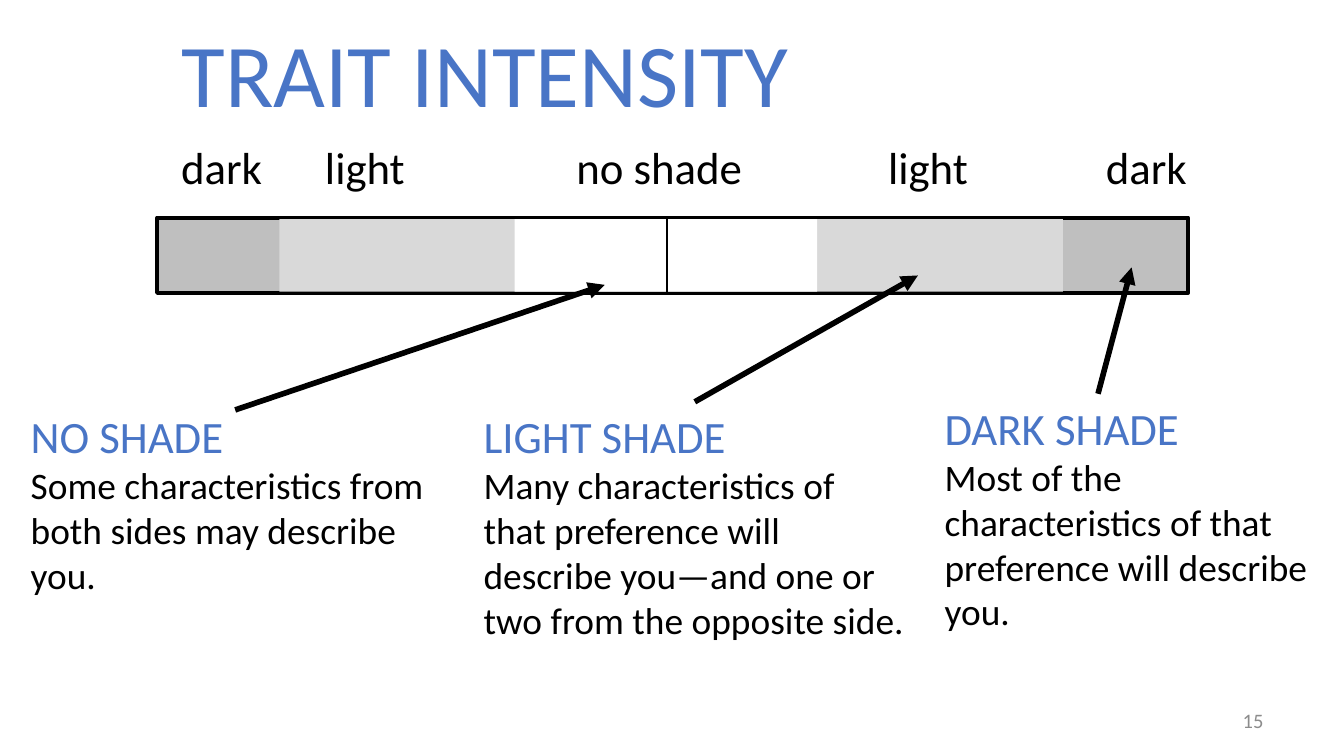
import pptx
import pptx.util
import pptx.dml.color
import pptx.enum.shapes
import pptx.enum.text
import pptx.oxml
import pptx.oxml.ns

Inches = pptx.util.Inches
ALIGN = pptx.enum.text.PP_ALIGN
ANCHOR = pptx.enum.text.MSO_ANCHOR
FIT = pptx.enum.text.MSO_AUTO_SIZE
COLORS = {
    "accent": "4975C6",
    "text": "000000",
    "dark": "BFBFBF",
    "light": "D9D9D9",
    "none": "FFFFFF",
    "number": "8C8C8C",
}


class SlideBuilder:
    font = "Calibri"

    def __init__(self, slide):
        self.s = slide

    def color(self, name):
        return pptx.dml.color.RGBColor.from_string(COLORS[name])

    def element(self, tag, attributes=""):
        return pptx.oxml.parse_xml(f"<a:{tag} {pptx.oxml.ns.nsdecls('a')} {attributes}/>")

    def style(self, p, size, color, align=ALIGN.LEFT):
        p.alignment = align
        for r in p.runs:
            r.font.name = self.font
            r.font.size = pptx.util.Pt(size)
            r.font.color.rgb = self.color(color)

    def title(self, text, x, y, w, h):
        sp = self.s.shapes.title
        sp.left, sp.top, sp.width, sp.height = map(Inches, (x, y, w, h))
        tf = sp.text_frame
        tf.text = text
        tf.word_wrap = True
        tf.auto_size = FIT.SHAPE_TO_FIT_TEXT
        tf.vertical_anchor = ANCHOR.TOP
        self.style(tf.paragraphs[0], 48, "accent")

    def text(self, lines, x, y, w, h, align=ALIGN.LEFT, anchor=ANCHOR.TOP, fit=FIT.SHAPE_TO_FIT_TEXT):
        sp = self.s.shapes.add_textbox(*map(Inches, (x, y, w, h)))
        tf = sp.text_frame
        tf.word_wrap = True
        tf.auto_size = fit
        tf.vertical_anchor = anchor
        tf.text = "\n".join(line[0] for line in lines)
        for p, (_, size, color) in zip(tf.paragraphs, lines):
            self.style(p, size, color, align)
        return tf

    def tabbed(self, labels, stops, x, y, w, h):
        tf = self.text([("\t".join(labels), 24, "text")], x, y, w, h, fit=FIT.NONE)
        tabs = self.element("tabLst")
        for stop in stops:
            tabs.append(self.element("tab", f'pos="{Inches(stop)}" algn="l"'))
        tf.paragraphs[0]._p.get_or_add_pPr().append(tabs)

    def band(self, x, y, w, h, fill, border=None):
        sp = self.s.shapes.add_shape(
            pptx.enum.shapes.MSO_SHAPE.RECTANGLE, *map(Inches, (x, y, w, h)))
        sp.shadow.inherit = False
        sp.fill.solid()
        sp.fill.fore_color.rgb = self.color(fill)
        if border:
            sp.line.color.rgb = self.color("text")
            sp.line.width = pptx.util.Pt(border)
        else:
            sp.line.fill.background()

    def line(self, start, end, width, arrow=False):
        c = self.s.shapes.add_connector(
            pptx.enum.shapes.MSO_CONNECTOR.STRAIGHT, *map(Inches, start + end))
        c.line.color.rgb = self.color("text")
        c.line.width = pptx.util.Pt(width)
        spPr = c._element.spPr
        if arrow:
            spPr.find(pptx.oxml.ns.qn("a:ln")).append(self.element("tailEnd", 'type="triangle"'))
        spPr.append(self.element("effectLst"))


def main():
    prs = pptx.Presentation()
    prs.slide_width = Inches(10)
    prs.slide_height = prs.slide_width * 9 // 16
    b = SlideBuilder(prs.slides.add_slide(prs.slide_layouts[5]))

    b.title("TRAIT INTENSITY", 1.25, 0.08, 7.08, 0.91)

    bar_top = 1.62
    b.band(1.17, bar_top, 7.67, 0.56, "dark", border=2.25)
    b.band(2.08, bar_top, 5.83, 0.55, "light")
    b.band(3.83, bar_top, 2.25, 0.55, "none")
    b.line((4.96, bar_top), (4.96, 2.18), 1)
    b.line((1.17, bar_top), (8.75, bar_top), 1)

    shades = [
        ("NO SHADE", "Some characteristics from both sides may describe you.",
         (0.13, 2.99, 3.37, 1.51), (1.75, 3.05), (4.5, 2.12)),
        ("LIGHT SHADE", "Many characteristics of that preference will describe you—and one or "
         "two from the opposite side.",
         (3.5, 2.99, 3.33, 1.85), (5.17, 2.99), (6.83, 2.05)),
        ("DARK SHADE", "Most of the characteristics of that preference will describe you.",
         (6.93, 2.93, 2.98, 1.85), (8.17, 2.93), (8.42, 1.99)),
    ]
    for heading, description, box, start, end in shades:
        b.line(start, end, 3, arrow=True)
        b.text([(heading, 24, "accent"), (description, 20, "text")], *box)

    b.tabbed(["dark", "light", "no shade", "light", "dark"],
             [1.07, 2.94, 5.26, 6.88], 1.25, 0.99, 8, 0.91)
    b.text([("15", 11, "number")], 7.17, 5.21, 2.33, 0.3, ALIGN.RIGHT, ANCHOR.MIDDLE, FIT.NONE)
    prs.save("out.pptx")


if __name__ == "__main__":
    main()
